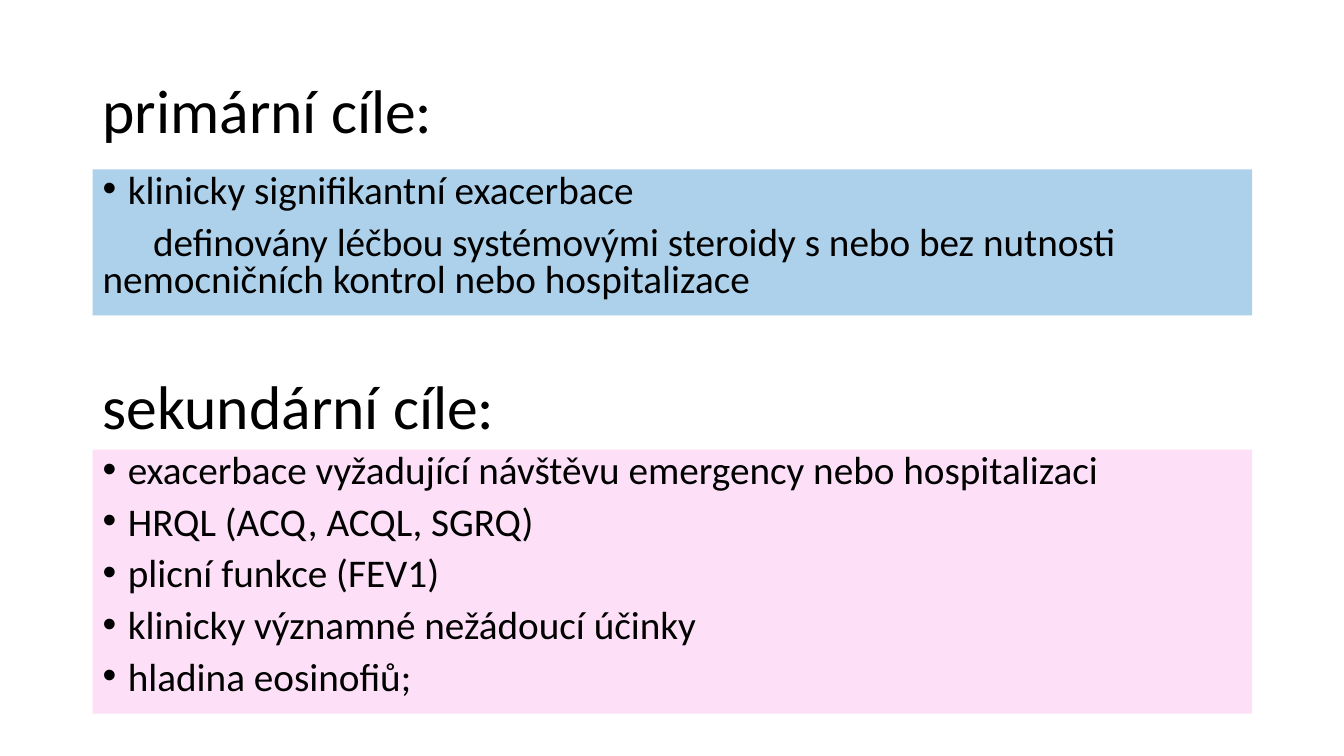
import pptx
import pptx.dml.color
import pptx.enum.shapes
import pptx.enum.text
import pptx.oxml.ns
import pptx.util
from lxml import etree
from pptx.util import Inches

COLORS = {"text": "000000", "primary": "0070C0", "secondary": "F711CB"}
LEFT, WIDTH, HEADING_HEIGHT = 0.92, 11.5, 1.45


def color(name):
    return pptx.dml.color.RGBColor.from_string(COLORS[name])


class GoalsSlide:
    """Hold the text style and the slide, and add headings and panels."""

    font = "Calibri"
    heading_size = 44
    body_size = 28
    indent = 0.25

    def __init__(self, slide):
        self.slide = slide

    def format_text(self, para, size, spacing):
        para.alignment = pptx.enum.text.PP_ALIGN.LEFT
        para.line_spacing = spacing
        for span in para.runs:
            span.font.name = self.font
            span.font.size = pptx.util.Pt(size)
            span.font.color.rgb = color("text")

    def heading(self, top, text):
        box = self.slide.shapes.add_textbox(
            Inches(LEFT), Inches(top), Inches(WIDTH), Inches(HEADING_HEIGHT))
        frame = box.text_frame
        frame.word_wrap = True
        frame.vertical_anchor = pptx.enum.text.MSO_ANCHOR.MIDDLE
        frame.text = text
        self.format_text(frame.paragraphs[0], self.heading_size, 0.9)

    def panel(self, top, height, fill, opacity, bullets, detail=None):
        box = self.slide.shapes.add_shape(
            pptx.enum.shapes.MSO_SHAPE.RECTANGLE,
            Inches(LEFT), Inches(top), Inches(WIDTH), Inches(height))
        box.shadow.inherit = False
        box.line.fill.background()
        box.fill.solid()
        box.fill.fore_color.rgb = color(fill)
        tint = box.fill._xPr.find(".//" + pptx.oxml.ns.qn("a:srgbClr"))
        etree.SubElement(tint, pptx.oxml.ns.qn("a:alpha"), val=str(opacity * 1000))
        frame = box.text_frame
        frame.word_wrap = True
        frame.vertical_anchor = pptx.enum.text.MSO_ANCHOR.TOP
        frame.text = "\n".join(bullets + ([detail] if detail else []))
        for para in frame.paragraphs:
            self.format_text(para, self.body_size, 0.8)
            para.space_before = pptx.util.Pt(10)
        for para in frame.paragraphs[:len(bullets)]:
            self.bullet(para)

    def bullet(self, para):
        properties = para._p.get_or_add_pPr()
        properties.set("marL", str(Inches(self.indent)))
        properties.set("indent", str(-Inches(self.indent)))
        etree.SubElement(properties, pptx.oxml.ns.qn("a:buFont"), typeface="Arial")
        etree.SubElement(properties, pptx.oxml.ns.qn("a:buChar"), char="•")


def main():
    deck = pptx.Presentation()
    deck.slide_width = Inches(13.33)
    deck.slide_height = Inches(7.5)
    page = GoalsSlide(deck.slides.add_slide(deck.slide_layouts[6]))
    page.heading(0.4, "primární cíle:")
    page.panel(
        1.68, 1.45, "primary", 32, ["klinicky signifikantní exacerbace"],
        "\tdefinovány léčbou systémovými steroidy s nebo bez nutnosti "
        "\tnemocničních kontrol nebo hospitalizace")
    page.heading(3.34, "sekundární cíle:")
    page.panel(4.46, 2.62, "secondary", 13, [
        "exacerbace vyžadující návštěvu emergency nebo hospitalizaci",
        "HRQL (ACQ, ACQL, SGRQ)",
        "plicní funkce (FEV1)",
        "klinicky významné nežádoucí účinky",
        "hladina eosinofiů;",
    ])
    deck.save("out.pptx")


if __name__ == "__main__":
    main()
